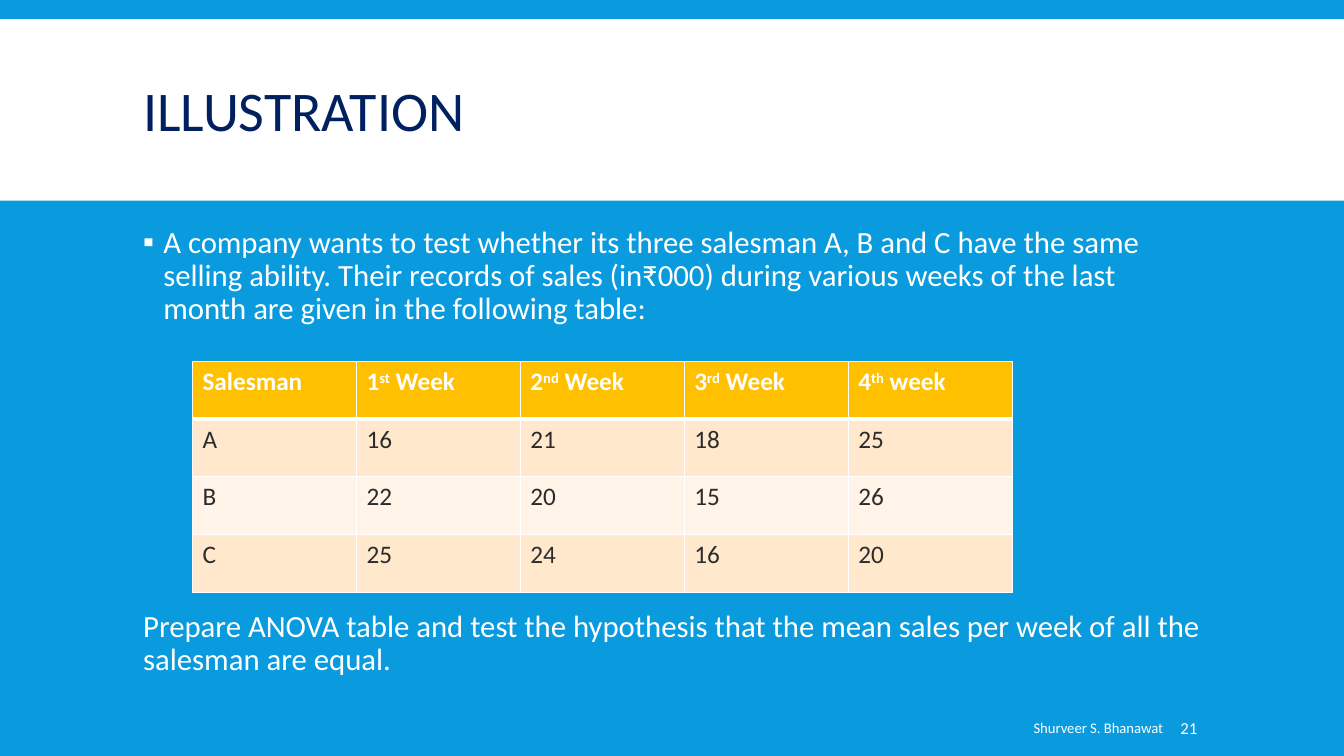
from lxml import etree
from pptx import Presentation
from pptx import util as u
from pptx.dml.color import RGBColor
from pptx.enum import shapes, text
from pptx.oxml import ns

Pt = u.Pt

# Content; ^ marks the bounds of a superscript
TITLE = "ILLUSTRATION"
INTRO = ("A company wants to test whether its three salesman A, B and C have "
         "the same selling ability. Their records of sales (in₹000) during "
         "various weeks of the last month are given in the following table:")
TASK = ("Prepare ANOVA table and test the hypothesis that the mean sales "
        "per week of all the salesman are equal.")
SALES = [
    ("Salesman", "1^st^ Week", "2^nd^ Week", "3^rd^ Week", "4^th^ week"),
    ("A", 16, 21, 18, 25),
    ("B", 22, 20, 15, 26),
    ("C", 25, 24, 16, 20),
]
AUTHOR, PAGE = "Shurveer S. Bhanawat", "21"

# Look
BLUE, WHITE, NAVY = "099BDD", "FFFFFF", "002060"
GOLD, PEACH, CREAM, DARK = "FFC000", "FFE8CC", "FFF4E7", "2C2C2C"
FONT = "Calibri"
WIDE, HIGH = 960, 540
LEFT, SPAN = 95.04, 770.4
COL, ROW = 117.1, 41.2


def color(code):
    return RGBColor.from_string(code)


def paint(fill, code):
    fill.solid()
    fill.fore_color.rgb = color(code)


def place(shape, left, top, width, height):
    shape.left, shape.top = Pt(left), Pt(top)
    shape.width, shape.height = Pt(width), Pt(height)


def write(par, words, size=18, tint=WHITE, bold=False, align="LEFT",
          line=1.0, before=0, after=0):
    par.alignment = getattr(text.PP_ALIGN, align)
    par.line_spacing = line
    par.space_before, par.space_after = Pt(before), Pt(after)
    for i, part in enumerate(str(words).split("^")):
        run = par.add_run()
        run.text = part
        font = run.font
        font.name, font.size, font.bold = FONT, Pt(size), bold
        font.color.rgb = color(tint)
        if i % 2:
            run._r.get_or_add_rPr().set("baseline", "30000")


def frame(shape, anchor):
    box = shape.text_frame
    box.word_wrap = True
    box.auto_size = text.MSO_AUTO_SIZE.NONE
    box.vertical_anchor = getattr(text.MSO_ANCHOR, anchor)
    return box


def bullet(par, mark=None, indent=0):
    props = par._p.get_or_add_pPr()
    props.set("marL", str(Pt(indent)))
    props.set("indent", str(-Pt(indent)))
    if not mark:
        etree.SubElement(props, ns.qn("a:buNone"))
        return
    tint = etree.SubElement(props, ns.qn("a:buClr"))
    etree.SubElement(tint, ns.qn("a:srgbClr"), val=WHITE)
    etree.SubElement(props, ns.qn("a:buFont"), typeface=FONT)
    etree.SubElement(props, ns.qn("a:buChar"), char=mark)


def border(cell, widths):
    props = cell._tc.get_or_add_tcPr()
    for side, width in widths.items():
        edge = etree.SubElement(props, ns.qn("a:ln" + side), w=str(Pt(width)))
        fill = etree.SubElement(edge, ns.qn("a:solidFill"))
        etree.SubElement(fill, ns.qn("a:srgbClr"), val=WHITE)


def main():
    deck = Presentation()
    deck.slide_width, deck.slide_height = Pt(WIDE), Pt(HIGH)
    slide = deck.slides.add_slide(deck.slide_layouts[1])
    paint(slide.background.fill, BLUE)

    # White title band, sent behind the title
    band = slide.shapes.add_shape(shapes.MSO_SHAPE.RECTANGLE,
                                  0, Pt(13.7), Pt(WIDE), Pt(129.6))
    band.shadow.inherit = False
    paint(band.fill, WHITE)
    band.line.fill.background()
    slide.shapes._spTree.insert(2, band._element)

    # Title
    title = slide.shapes.title
    place(title, LEFT, 22.3, SPAN, 118.8)
    write(frame(title, "MIDDLE").paragraphs[0], TITLE, size=40, tint=NAVY,
          line=0.85)

    # Body: the space before the task leaves room for the table
    body = slide.placeholders[1]
    place(body, LEFT, 158.4, SPAN, 331.2)
    box = frame(body, "TOP")
    intro, task = box.paragraphs[0], box.add_paragraph()
    bullet(intro, "▪", 14.4)
    bullet(task)
    write(intro, INTRO, size=22, line=0.9, after=2)
    write(task, TASK, size=22, line=0.9, before=201)

    # Sales table
    rows, cols = len(SALES), len(SALES[0])
    table = slide.shapes.add_table(rows, cols, Pt(137.5), Pt(258.2),
                                   Pt(COL * cols), Pt(ROW * rows)).table
    for col in table.columns:
        col.width = Pt(COL)
    for r, week in enumerate(SALES):
        table.rows[r].height = Pt(ROW)
        head = r == 0
        for c, value in enumerate(week):
            cell = table.cell(r, c)
            border(cell, {"L": 1, "R": 1, "T": 3 if r == 1 else 1,
                          "B": 3 if head else 1})
            paint(cell.fill, GOLD if head else PEACH if r % 2 else CREAM)
            write(cell.text_frame.paragraphs[0], value, bold=head,
                  tint=WHITE if head else DARK)

    # Footer
    for words, left, width, size, align, inset in (
            (AUTHOR, 440.6, 397.4, 10.5, "RIGHT", 7.2),
            (PAGE, 839.5, 74.2, 12, "LEFT", 3.6)):
        note = slide.shapes.add_textbox(Pt(left), Pt(505.4),
                                        Pt(width), Pt(28.8))
        box = frame(note, "MIDDLE")
        box.margin_left = Pt(inset)
        write(box.paragraphs[0], words, size=size, align=align)

    deck.save("out.pptx")


if __name__ == "__main__":
    main()
